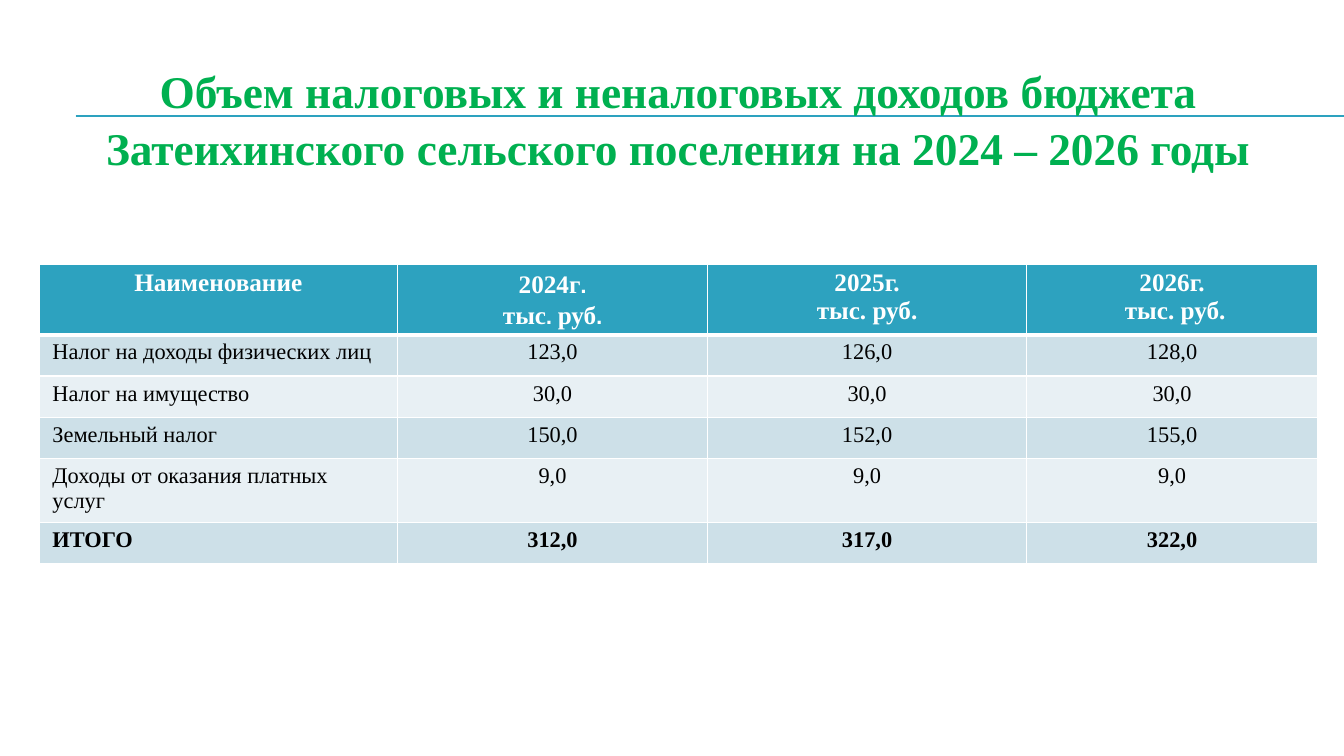
import lxml.etree
import pptx
import pptx.dml.color
import pptx.enum.shapes
import pptx.enum.text
import pptx.oxml.ns
import pptx.util

Inches, Pt = pptx.util.Inches, pptx.util.Pt
RGBColor = pptx.dml.color.RGBColor
PP_ALIGN = pptx.enum.text.PP_ALIGN
ANCHOR = pptx.enum.text.MSO_ANCHOR
qn = pptx.oxml.ns.qn

TEAL = RGBColor(0x2D, 0xA2, 0xBF)
GREEN = RGBColor(0x00, 0xB0, 0x50)
WHITE = RGBColor(0xFF, 0xFF, 0xFF)
BLACK = RGBColor(0x00, 0x00, 0x00)
BANDS = [RGBColor(0xCD, 0xE0, 0xE8), RGBColor(0xE8, 0xF0, 0xF4)]
SERIF, SANS = "Times New Roman", "Cabin"

TITLE = ("Объем налоговых и неналоговых доходов бюджета "
         "Затеихинского сельского поселения на 2024 – 2026 годы")
# Each heading is a list of lines, each line a list of (text, font) runs
HEADINGS = [
    [[("Наименование", SERIF)]],
    [[("2024г", SERIF), (".", SANS)],
     [("тыс", SERIF), (". ", SANS), ("руб", SERIF), (".", SANS)]],
    [[("2025г.", SERIF)], [("тыс. руб.", SERIF)]],
    [[("2026г.", SERIF)], [(" тыс. руб.", SERIF)]],
]
INCOME = [
    ("Налог на доходы физических лиц", "123,0", "126,0", "128,0"),
    ("Налог на имущество", "30,0", "30,0", "30,0"),
    ("Земельный налог", "150,0", "152,0", "155,0"),
    ("Доходы от оказания платных услуг", "9,0", "9,0", "9,0"),
    ("ИТОГО", "312,0", "317,0", "322,0"),
]
COL_WIDTHS = [3.55, 3.08, 3.16, 2.89]
ROW_HEIGHTS = [0.7, 0.41, 0.41, 0.41, 0.6, 0.41]


def add_run(p, text, size, color, bold, font=SERIF):
    r = p.add_run()
    r.text = text
    r.font.name, r.font.size = font, Pt(size)
    r.font.bold, r.font.color.rgb = bold, color


def add_rules(s, x, y, width):
    """Two thin rules almost on top of each other."""
    for offset in (0, 0.01):
        line = s.shapes.add_connector(
            pptx.enum.shapes.MSO_CONNECTOR.STRAIGHT, Inches(x),
            Inches(y + offset), Inches(x + width), Inches(y + offset))
        line.line.color.rgb = TEAL
        line.line.width = Pt(0.75)
        lxml.etree.SubElement(line._element.spPr, qn("a:effectLst"))


def add_title(s, x, y, width, height):
    sp = s.shapes.add_textbox(Inches(x), Inches(y), Inches(width), Inches(height))
    tf = sp.text_frame
    tf.word_wrap = True
    tf.vertical_anchor = ANCHOR.MIDDLE
    p = tf.paragraphs[0]
    p.alignment = PP_ALIGN.CENTER
    p.line_spacing = 1.05
    add_run(p, TITLE, 32.4, GREEN, True)


def set_borders(cell, widths):
    """Draw white borders; they must come before the cell's fill."""
    tc_pr = cell._tc.get_or_add_tcPr()
    for side, width in widths.items():
        ln = lxml.etree.SubElement(tc_pr, qn("a:ln" + side), w=str(Pt(width)))
        fill = lxml.etree.SubElement(ln, qn("a:solidFill"))
        lxml.etree.SubElement(fill, qn("a:srgbClr"), val=str(WHITE))


def fill_cell(cell, lines, fill, size, color, bold, align):
    top = 3 if lines[0][0][0] in [row[0] for row in INCOME[:1]] else 1
    set_borders(cell, {"L": 1, "R": 1, "T": top, "B": 3 if fill == TEAL else 1})
    cell.fill.solid()
    cell.fill.fore_color.rgb = fill
    cell.margin_left = cell.margin_right = Inches(0.13)
    cell.margin_top = cell.margin_bottom = Inches(0.05)
    tf = cell.text_frame
    for i, runs in enumerate(lines):
        p = tf.add_paragraph() if i else tf.paragraphs[0]
        p.alignment = align
        for text, font in runs:
            add_run(p, text, size, color, bold, font)


def add_income_table(s, x, y):
    frame = s.shapes.add_table(
        len(ROW_HEIGHTS), len(COL_WIDTHS), Inches(x), Inches(y),
        Inches(sum(COL_WIDTHS)), Inches(sum(ROW_HEIGHTS)))
    table = frame.table
    for col, width in zip(table.columns, COL_WIDTHS):
        col.width = Inches(width)
    for row, height in zip(table.rows, ROW_HEIGHTS):
        row.height = Inches(height)

    # Header row
    for c, lines in enumerate(HEADINGS):
        fill_cell(table.cell(0, c), lines, TEAL, 18, WHITE, True, PP_ALIGN.CENTER)

    # Banded body rows, the total in bold
    for i, values in enumerate(INCOME):
        for c, text in enumerate(values):
            fill_cell(table.cell(i + 1, c), [[(text, SERIF)]], BANDS[i % 2], 16,
                      BLACK, i == len(INCOME) - 1,
                      PP_ALIGN.CENTER if c else PP_ALIGN.LEFT)


def main():
    prs = pptx.Presentation()
    prs.slide_width, prs.slide_height = Inches(13.33), Inches(7.5)
    s = prs.slides.add_slide(prs.slide_layouts[6])
    add_rules(s, 0.75, 1.15, 12.58)
    add_title(s, 0.73, 0.52, 11.99, 1.3)
    add_income_table(s, 0.39, 2.62)
    prs.save("out.pptx")


if __name__ == "__main__":
    main()
